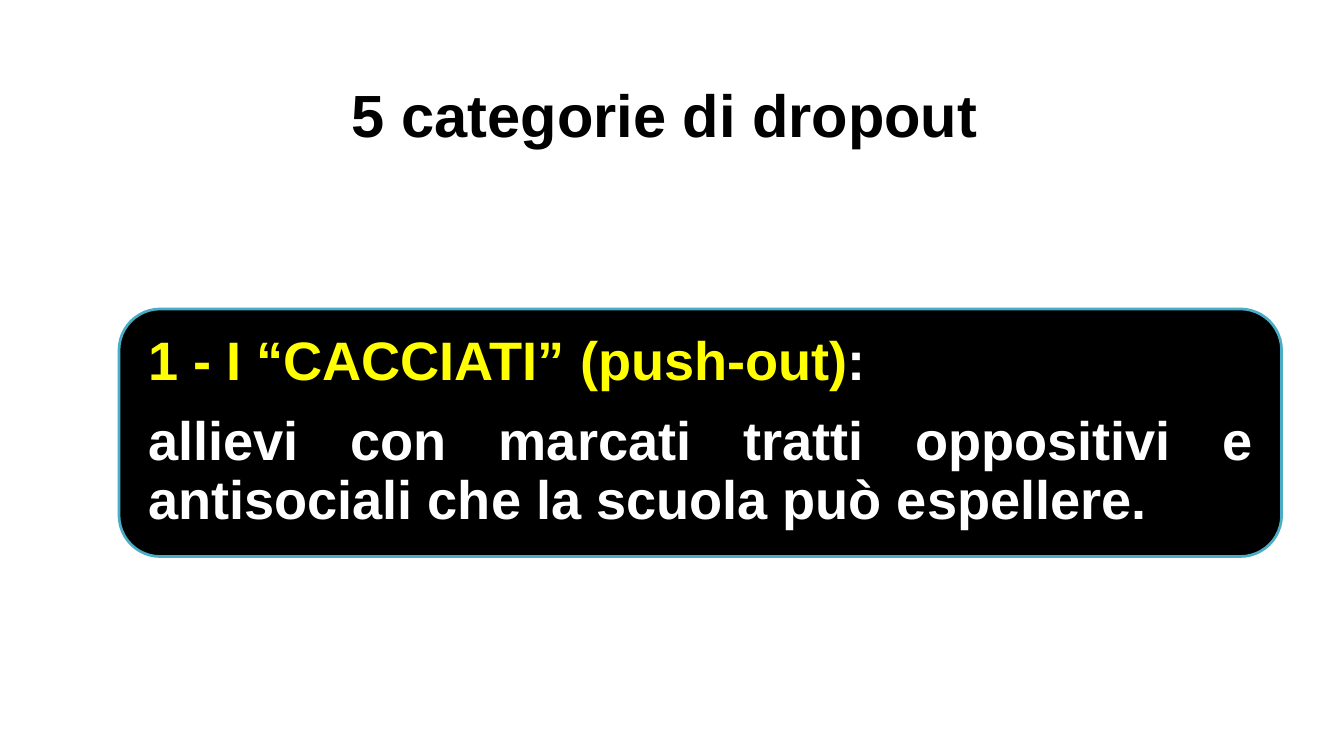
import pptx
import pptx.util
import pptx.dml.color
import pptx.enum.shapes
import pptx.enum.text

Inches = pptx.util.Inches
Pt = pptx.util.Pt
Align = pptx.enum.text.PP_ALIGN

BLACK = "000000"
WHITE = "FFFFFF"
YELLOW = "FFFF00"
TEAL = "4BACC6"


def color(hex_value):
    return pptx.dml.color.RGBColor.from_string(hex_value)


def write_run(paragraph, text, *, size, fill, bold=True, font="Arial"):
    run = paragraph.add_run()
    run.text = text
    run.font.name = font
    run.font.size = Pt(size)
    run.font.bold = bold
    run.font.color.rgb = color(fill)


def add_text(shapes, box, paragraphs, *, size, align, inset=0.1,
             line_spacing=None, space_after=None):
    frame = shapes.add_textbox(*map(Inches, box)).text_frame
    frame.word_wrap = True
    frame.vertical_anchor = pptx.enum.text.MSO_ANCHOR.MIDDLE
    frame.margin_left = frame.margin_right = Inches(inset)
    frame.margin_top = frame.margin_bottom = Inches(inset)
    for index, runs in enumerate(paragraphs):
        paragraph = frame.add_paragraph() if index else frame.paragraphs[0]
        paragraph.alignment = align
        if line_spacing is not None:
            paragraph.line_spacing = line_spacing
        if space_after is not None:
            paragraph.space_after = Pt(space_after)
        for text, fill in runs:
            write_run(paragraph, text, size=size, fill=fill)


def add_panel(shapes, box, *, fill, outline, width):
    panel = shapes.add_shape(
        pptx.enum.shapes.MSO_SHAPE.ROUNDED_RECTANGLE, *map(Inches, box))
    panel.shadow.inherit = False
    panel.fill.solid()
    panel.fill.fore_color.rgb = color(fill)
    panel.line.color.rgb = color(outline)
    panel.line.width = Pt(width)


def main():
    deck = pptx.Presentation()
    deck.slide_width = Inches(13.78)
    deck.slide_height = Inches(7.5)
    slide = deck.slides.add_slide(deck.slide_layouts[6])

    add_text(slide.shapes, (3.39, 0.44, 6.86, 1.45),
             [[("5 categorie di dropout", BLACK)]],
             size=44, align=Align.CENTER)

    category = slide.shapes.add_group_shape().shapes
    add_panel(category, (1.22, 3.17, 11.92, 2.54),
              fill=BLACK, outline=TEAL, width=2)
    add_text(category, (1.35, 3.29, 11.67, 2.29),
             [[("1 - I “CACCIATI” (push-out)", YELLOW), (":", WHITE)],
              [("allievi con marcati tratti oppositivi e antisociali "
                "che la scuola può espellere.", WHITE)]],
             size=40, align=Align.JUSTIFY, inset=0.17,
             line_spacing=0.9, space_after=16)

    deck.save("out.pptx")


if __name__ == "__main__":
    main()
